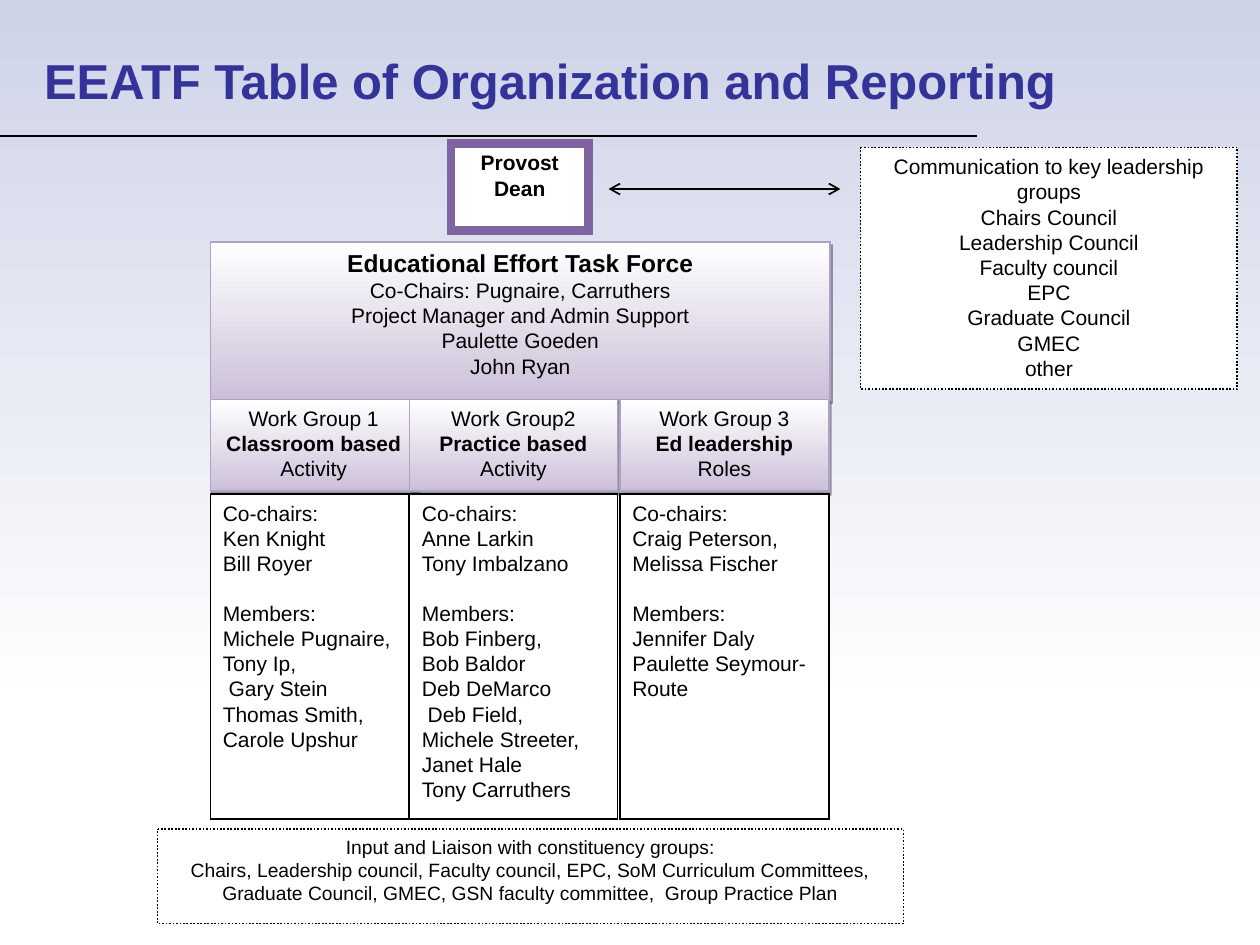
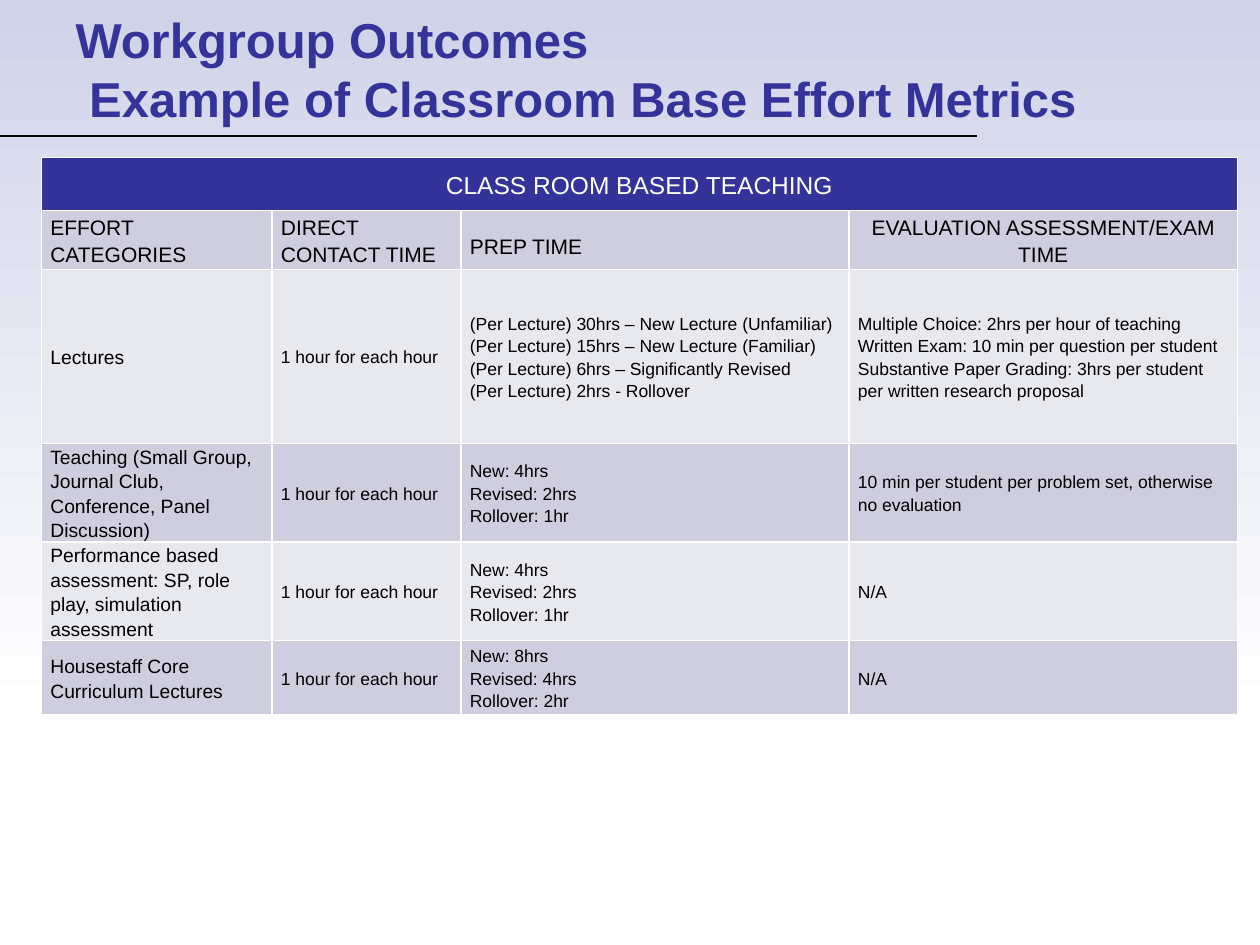
from lxml import etree
from pptx import Presentation
from pptx import util as u
from pptx.dml import color as dml
from pptx.enum import dml as line_styles, shapes, text
from pptx.oxml import ns

FONT = "Arial"
INDIGO, BLACK, WHITE = "333399", "000000", "FFFFFF"
SKY, LILAC, MAUVE, PURPLE, PLUM = "CFD3E8", "CCC0D9", "B2A1C7", "8064A2", "3F3151"
ROW_DARK, ROW_LIGHT = "CECEDE", "E8E8EF"
LEFT, CENTER = text.PP_ALIGN.LEFT, text.PP_ALIGN.CENTER
TOP, MIDDLE = text.MSO_ANCHOR.TOP, text.MSO_ANCHOR.MIDDLE

LEADERSHIP = ["Communication to key leadership groups", "Chairs Council",
              "Leadership Council", "Faculty council", "EPC",
              "Graduate Council", "GMEC", "other"]
TASK_FORCE = ["Educational Effort Task Force", "Co-Chairs: Pugnaire, Carruthers",
              "Project Manager and Admin Support", "Paulette Goeden", "John Ryan"]
LIAISON = ["Input and Liaison with constituency groups:",
           "Chairs, Leadership council, Faculty council, EPC, SoM Curriculum "
           "Committees, Graduate Council, GMEC, GSN faculty committee,  "
           "Group Practice Plan"]
# left, heading width, list width, heading (name, focus, rest), co-chairs, members
WORK_GROUPS = [
    (1.67, 1.64, 1.57, ["Work Group 1", [("Classroom based", True), (" Activity", False)]],
     ["Ken Knight", "Bill Royer"],
     ["Michele Pugnaire, Tony Ip,", " Gary Stein", "Thomas Smith, Carole Upshur"]),
    (3.25, 1.65, 1.65, ["Work Group2", [("Practice based", True), (" Activity", False)]],
     ["Anne Larkin", "Tony Imbalzano"],
     ["Bob Finberg,", "Bob Baldor", "Deb DeMarco", " Deb Field,",
      "Michele Streeter, Janet Hale", "Tony Carruthers"]),
    (4.92, 1.66, 1.66, ["Work Group 3", [("Ed leadership", True)], "Roles"],
     ["Craig Peterson, Melissa Fischer"],
     ["Jennifer Daly Paulette Seymour-Route"]),
]

HOURLY = "1 hour for each hour"
METRIC_HEADINGS = ["EFFORT CATEGORIES", "DIRECT CONTACT TIME", "PREP TIME",
                   "EVALUATION ASSESSMENT/EXAM TIME"]
METRICS = [
    ("Lectures",
     ["(Per Lecture) 30hrs – New Lecture (Unfamiliar)",
      "(Per Lecture) 15hrs – New Lecture (Familiar)",
      "(Per Lecture) 6hrs – Significantly Revised",
      "(Per Lecture) 2hrs - Rollover"],
     ["Multiple Choice: 2hrs per hour of teaching",
      "Written Exam: 10 min per question per student",
      "Substantive Paper Grading: 3hrs per student per written research proposal"]),
    ("Teaching (Small Group, Journal Club, Conference, Panel Discussion)",
     ["New: 4hrs", "Revised: 2hrs", "Rollover: 1hr"],
     ["10 min per student per problem set, otherwise no evaluation"]),
    ("Performance based assessment: SP, role play, simulation assessment",
     ["New: 4hrs", "Revised: 2hrs", "Rollover: 1hr"], ["N/A"]),
    ("Housestaff Core Curriculum Lectures",
     ["New: 8hrs", "Revised: 4hrs", "Rollover: 2hr"], ["N/A"]),
]


# ---- shared helpers ----
def rgb(hex_code):
    return dml.RGBColor.from_string(hex_code)


def inches(box):
    return [u.Inches(length) for length in box]


def style(font, size, color=BLACK, bold=False):
    font.name, font.size, font.bold = FONT, u.Pt(size), bold
    font.color.rgb = rgb(color)


def write(frame, lines, size, align=LEFT, color=BLACK, bold=False, spacing=None):
    """Each line is a string, or a list of (words, bold) pairs."""
    frame.word_wrap = True
    for i, line in enumerate(lines):
        paragraph = frame.paragraphs[0] if i == 0 else frame.add_paragraph()
        paragraph.alignment = align
        if spacing:
            paragraph.line_spacing = spacing
        if isinstance(line, str):
            paragraph.text = line
            for run in paragraph.runs:
                style(run.font, size, color, bold)
            continue
        for words, strong in line:
            run = paragraph.add_run()
            run.text = words
            style(run.font, size, color, strong)


def fill_down(shape, top_color, bottom_color):
    shape.fill.gradient()
    shape.fill.gradient_angle = 270
    for stop, position, hex_code in zip(shape.fill.gradient_stops, (0, 1),
                                        (top_color, bottom_color)):
        stop.position = position
        stop.color.rgb = rgb(hex_code)


def add_panel(slide, box, lines, size=12, align=CENTER, border=BLACK,
              weight=1, dotted=False, bold=False):
    panel = slide.shapes.add_shape(shapes.MSO_SHAPE.FLOWCHART_PROCESS, *inches(box))
    panel.shadow.inherit = False
    panel.fill.solid()
    panel.fill.fore_color.rgb = rgb(WHITE)
    panel.line.color.rgb = rgb(border)
    panel.line.width = u.Pt(weight)
    if dotted:
        panel.line.dash_style = line_styles.MSO_LINE.ROUND_DOT
    outline = panel.element.spPr.find(ns.qn("a:ln"))
    etree.SubElement(outline, ns.qn("a:miter"), lim="800000")
    panel.text_frame.vertical_anchor = TOP
    write(panel.text_frame, lines, size, align, bold=bold)
    return panel


def add_lilac_panel(slide, box, lines):
    panel = add_panel(slide, box, lines, border=MAUVE)
    fill_down(panel, WHITE, LILAC)
    effects = panel.element.spPr.find(ns.qn("a:effectLst"))
    shadow = etree.SubElement(effects, ns.qn("a:outerShdw"), blurRad="0",
                              dist=str(u.Pt(2.2)), dir=str(63 * 60000))
    tint = etree.SubElement(shadow, ns.qn("a:srgbClr"), val=PLUM)
    etree.SubElement(tint, ns.qn("a:alpha"), val="50000")
    return panel


def add_line(slide, start, end, weight, arrows=False):
    line = slide.shapes.add_connector(shapes.MSO_CONNECTOR.STRAIGHT,
                                      *inches(start + end))
    line.line.color.rgb = rgb(BLACK)
    line.line.width = u.Pt(weight)
    if arrows:
        outline = line.element.spPr.find(ns.qn("a:ln"))
        for end_tag in ("a:headEnd", "a:tailEnd"):
            etree.SubElement(outline, ns.qn(end_tag), type="arrow")
    etree.SubElement(line.element.spPr, ns.qn("a:effectLst"))
    return line


def add_title(slide, box, words, bottom_inset=0.05):
    title = slide.shapes.title
    title.left, title.top, title.width, title.height = inches(box)
    frame = title.text_frame
    frame.auto_size = text.MSO_AUTO_SIZE.NONE
    frame.vertical_anchor = MIDDLE
    frame.margin_bottom = u.Inches(bottom_inset)
    write(frame, [words], 28, color=INDIGO, bold=True)


def dress_layout(slide):
    """Give the slide's layout the fading sky band and the title rule."""
    sky = slide.shapes.add_shape(shapes.MSO_SHAPE.RECTANGLE, *inches((0, 0, 10, 5.67)))
    sky.shadow.inherit = False
    sky.line.fill.background()
    fill_down(sky, SKY, WHITE)
    rule = add_line(slide, (0, 1.08), (7.75, 1.08), 0.75)
    for position, part in enumerate((sky, rule), start=2):
        slide.slide_layout.shapes.element.insert(position, part.element)


# ---- organization chart ----
def add_work_group(slide, top, group):
    left, heading_width, list_width, heading, chairs, members = group
    add_lilac_panel(slide, (left, top, heading_width, 0.73), heading)
    people = ["Co-chairs:", *chairs, "Members:", *members]
    roster = add_panel(slide, (left, top + 0.75, list_width, 2.58), people,
                       align=LEFT, weight=0.75)
    roster.text_frame.paragraphs[len(chairs) + 1].space_before = u.Pt(14)


def add_organization(slide, box):
    left, top, width, height = box
    task_force = add_lilac_panel(slide, (left, top, width, height), TASK_FORCE)
    style(task_force.text_frame.paragraphs[0].runs[0].font, 14, bold=True)
    for group in WORK_GROUPS:
        add_work_group(slide, top + height, group)


def build_organization_slide(slide):
    add_title(slide, (0.25, 0.17, 9.58, 1.25),
              "EEATF Table of Organization and Reporting", bottom_inset=0.37)
    add_panel(slide, (6.83, 1.17, 2.99, 1.92), LEADERSHIP, dotted=True)
    add_panel(slide, (3.58, 1.14, 1.09, 0.69), ["Provost", "Dean"],
              border=PURPLE, weight=5, bold=True)
    add_organization(slide, (1.67, 1.92, 4.92, 1.25))
    add_panel(slide, (1.25, 6.58, 5.92, 0.75), LIAISON, size=11, dotted=True)
    add_line(slide, (4.83, 1.5), (6.67, 1.5), 1, arrows=True)


# ---- effort metrics table ----
def fill_cell(cell, lines, size, background, align=LEFT, color=BLACK):
    properties = cell._tc.get_or_add_tcPr()
    for side in "LRTB":
        border = etree.SubElement(properties, ns.qn(f"a:ln{side}"), w=str(u.Pt(1)))
        paint = etree.SubElement(border, ns.qn("a:solidFill"))
        etree.SubElement(paint, ns.qn("a:srgbClr"), val=WHITE)
    cell.fill.solid()
    cell.fill.fore_color.rgb = rgb(background)
    cell.margin_left = cell.margin_right = u.Inches(0.07)
    cell.margin_top = cell.margin_bottom = 0
    cell.vertical_anchor = MIDDLE
    write(cell.text_frame, lines, size, align, color, spacing=1.15)


def add_metrics_table(slide, box):
    widths = [1.83, 1.5, 3.08, 3.08]
    heights = [0.42, 0.47, 1.38, 0.65, 0.65, 0.59]
    table = slide.shapes.add_table(len(heights), len(widths), *inches(box)).table
    table.first_row = table.horz_banding = False
    for column, width in zip(table.columns, widths):
        column.width = u.Inches(width)
    for row, height in zip(table.rows, heights):
        row.height = u.Inches(height)

    banner = table.cell(0, 0)
    banner.merge(table.cell(0, len(widths) - 1))
    fill_cell(banner, ["CLASS ROOM BASED TEACHING"], 14, INDIGO, CENTER, WHITE)

    for c, heading in enumerate(METRIC_HEADINGS):
        fill_cell(table.cell(1, c), [heading], 12, ROW_DARK,
                  CENTER if c == len(widths) - 1 else LEFT)
    prep_heading = table.cell(1, 2)
    prep_heading.vertical_anchor = TOP
    prep_heading.margin_top = u.Inches(0.17)

    for r, (category, prep, evaluation) in enumerate(METRICS, start=2):
        background = ROW_DARK if r % 2 else ROW_LIGHT
        for c, lines in enumerate(([category], [HOURLY], prep, evaluation)):
            fill_cell(table.cell(r, c), lines, 10 if c else 11, background)


def build_metrics_slide(slide):
    add_title(slide, (0.5, 0, 9, 1.08),
              "Workgroup Outcomes\n Example of Classroom Base Effort Metrics")
    add_metrics_table(slide, (0.33, 1.25, 9.5, 4.16))


def main():
    deck = Presentation()
    deck.slide_width, deck.slide_height = u.Inches(10), u.Inches(7.5)
    title_only = deck.slide_layouts[5]
    organization = deck.slides.add_slide(title_only)
    dress_layout(organization)
    build_organization_slide(organization)
    build_metrics_slide(deck.slides.add_slide(title_only))
    deck.save("out.pptx")


if __name__ == "__main__":
    main()
